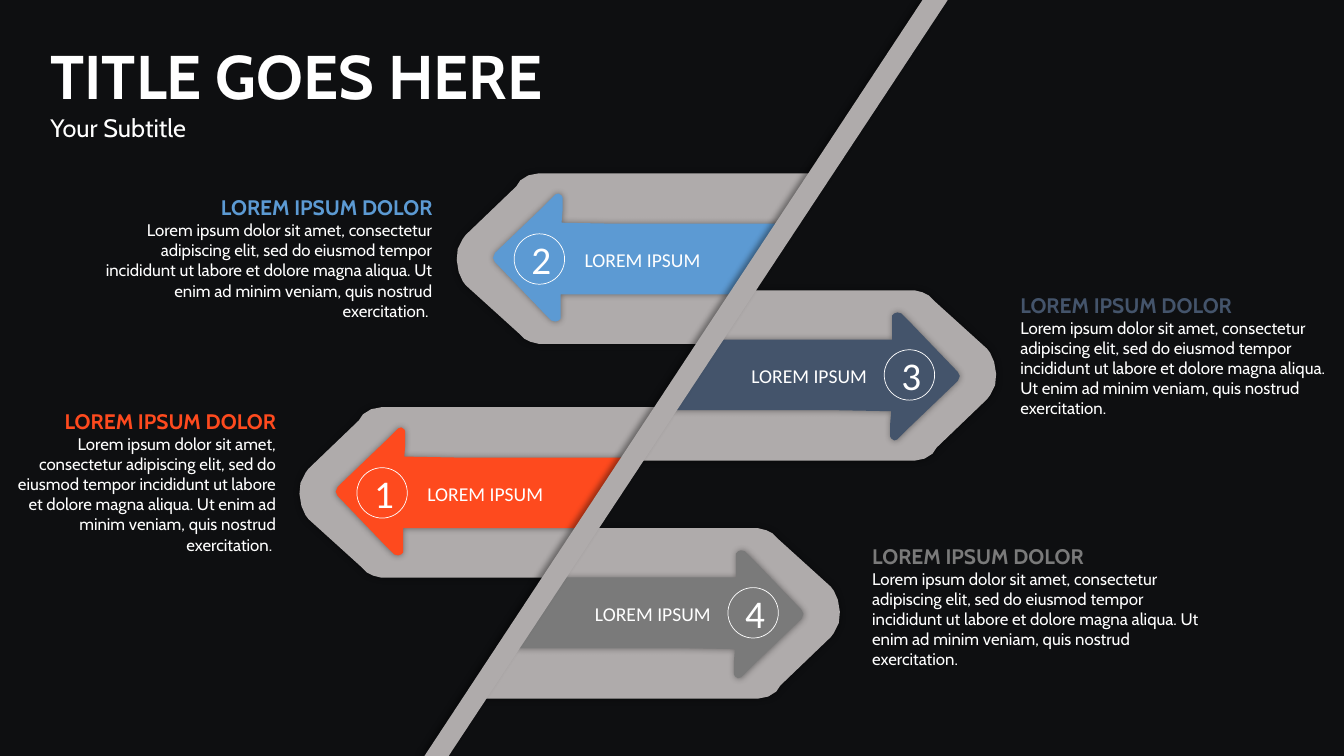
from lxml import etree
from pptx import Presentation, util as u
from pptx.dml.color import RGBColor
from pptx.enum import shapes as sh, text as tx
from pptx.oxml.ns import qn

# Grid: one unit is one inch
W, H = 13.33, 7.5
BACK, WHITE, GREY = "0E0F11", "FFFFFF", "AFABAB"
HEAD = "LOREM IPSUM DOLOR"
BODY = ("Lorem ipsum dolor sit amet, consectetur adipiscing elit, sed do "
        "eiusmod tempor incididunt ut labore et dolore magna aliqua. Ut enim "
        "ad minim veniam, quis nostrud exercitation.")

# Outlines measured from the tip of a band that points left
BAND = [(2.44, .84), (.81, .84), (.73, .82), (.67, .79), (.62, .74),
        (.09, .26), (.06, .22), (.02, .13), (0, .01), (.01, -.1),
        (.06, -.2), (.09, -.24), (.59, -.72), (.63, -.78), (.71, -.83),
        (.81, -.85), (3.55, -.85)]
ARROW = [(.98, .62), (.94, .61), (.86, .53), (.38, .03), (.36, -.01),
         (.38, -.06), (.86, -.52), (.98, -.64), (1.01, -.65), (1.04, -.63),
         (1.05, -.61), (1.05, -.48), (1.04, -.36), (1.59, -.35),
         (3.22, -.35), (2.76, .35), (1.03, .35), (1.03, .59), (1.01, .61)]
SLASH = [(9.15, 0), (9.4, 0), (4.45, H), (4.21, H)]

# number, colour, tip x, tip y, direction (1 points left), text box
STEPS = [("2", "5C9AD3", 4.53, 2.57, 1, (.89, 1.9, 3.47, 1.35)),
         ("1", "FE4A1E", 2.97, 4.89, 1, (.08, 4.02, 2.73, 1.55)),
         ("3", "44546B", 9.88, 3.72, -1, (10.05, 2.87, 3.24, 1.35)),
         ("4", "7A7A7A", 8.33, 6.08, -1, (8.58, 5.36, 3.47, 1.35))]


def paint(fmt, tone):
    """Give a fill or a line's fill one solid colour."""
    fmt.solid()
    fmt.fore_color.rgb = RGBColor.from_string(tone)


def units(*nums):
    return [u.Inches(n) for n in nums]


def shade(shape, blur=5, dist=0, angle=0):
    """Add a soft black outer shadow."""
    shape.shadow.inherit = False
    glow = etree.SubElement(
        shape._element.spPr.find(qn("a:effectLst")), qn("a:outerShdw"),
        blurRad=str(u.Pt(blur)), dist=str(u.Pt(dist)),
        dir=str(angle * 60000), algn="ctr", rotWithShape="0")
    tone = etree.SubElement(glow, qn("a:srgbClr"), val="000000")
    etree.SubElement(tone, qn("a:alpha"), val="40000")


def outline(slide, points, tone, x=0, y=0, side=1, **soft):
    """Draw a closed shape; side -1 turns it half round."""
    spots = [units(x + side * px, y + side * py) for px, py in points]
    path = slide.shapes.build_freeform(*spots[0], scale=1.0)
    path.add_line_segments(spots[1:], close=True)
    shape = path.convert_to_shape()
    paint(shape.fill, tone)
    shape.line.fill.background()
    shade(shape, **soft)


def write(shape, lines, align=tx.PP_ALIGN.LEFT, font="Cabin",
          anchor=tx.MSO_ANCHOR.TOP, pad=(.1, .05)):
    """Set paragraphs, each given as (words, size, colour, bold)."""
    frame = shape.text_frame
    frame.word_wrap = True
    frame.auto_size = tx.MSO_AUTO_SIZE.NONE
    frame.vertical_anchor = anchor
    frame.margin_left = frame.margin_right = u.Inches(pad[0])
    frame.margin_top = frame.margin_bottom = u.Inches(pad[1])
    for i, (words, size, tone, bold) in enumerate(lines):
        para = frame.add_paragraph() if i else frame.paragraphs[0]
        para.alignment = align
        run = para.add_run()
        run.text = words
        run.font.name, run.font.size, run.font.bold = font, u.Pt(size), bold
        run.font.color.rgb = RGBColor.from_string(tone)


def badge(slide, num, x, y, size=.5):
    """Draw a ringed number centred on a point."""
    ring = slide.shapes.add_shape(
        sh.MSO_SHAPE.OVAL, *units(x - size / 2, y - size / 2, size, size))
    ring.shadow.inherit = False
    ring.fill.background()
    paint(ring.line.fill, WHITE)
    ring.line.width = u.Pt(.5)
    write(ring, [(num, 28, WHITE, False)], tx.PP_ALIGN.CENTER, "Calibri",
          tx.MSO_ANCHOR.MIDDLE)


def label(slide, x, y, side, wide=1.73):
    """Place the arrow's caption beside its badge."""
    left = x + 1.17 if side > 0 else x - 1.18 - wide
    box = slide.shapes.add_textbox(*units(left, y - .16, wide, .34))
    align = tx.PP_ALIGN.LEFT if side > 0 else tx.PP_ALIGN.RIGHT
    write(box, [("LOREM IPSUM", 14, WHITE, False)], align, "Calibri")


def detail(slide, area, tone, side):
    """Place the heading and text outside a band."""
    box = slide.shapes.add_textbox(*units(*area))
    align = tx.PP_ALIGN.RIGHT if side > 0 else tx.PP_ALIGN.LEFT
    body = BODY + " " if side > 0 else BODY
    write(box, [(HEAD, 15, tone, True), (body, 12, WHITE, False)], align,
          pad=(.07, .03))


def main():
    deck = Presentation()
    deck.slide_width, deck.slide_height = units(W, H)
    slide = deck.slides.add_slide(deck.slide_layouts[5])
    paint(slide.background.fill, BACK)

    # Title and subtitle
    title = slide.shapes.title
    title.left, title.top, title.width, title.height = units(.4, .33, 6.5, 1.14)
    write(title, [("TITLE GOES HERE", 44, WHITE, True),
                  ("Your Subtitle", 18, WHITE, False)])

    # Grey bands and their texts
    for num, tone, x, y, side, area in STEPS:
        outline(slide, BAND, GREY, x, y, side)
        detail(slide, area, tone, side)

    # Coloured arrows
    for num, tone, x, y, side, area in STEPS:
        outline(slide, ARROW, tone, x, y, side)
        badge(slide, num, x + (.82 if side > 0 else -.86), y)
        label(slide, x, y, side)

    # Diagonal bar on top
    outline(slide, SLASH, GREY, blur=4, dist=3, angle=180)
    deck.save("out.pptx")


if __name__ == "__main__":
    main()
